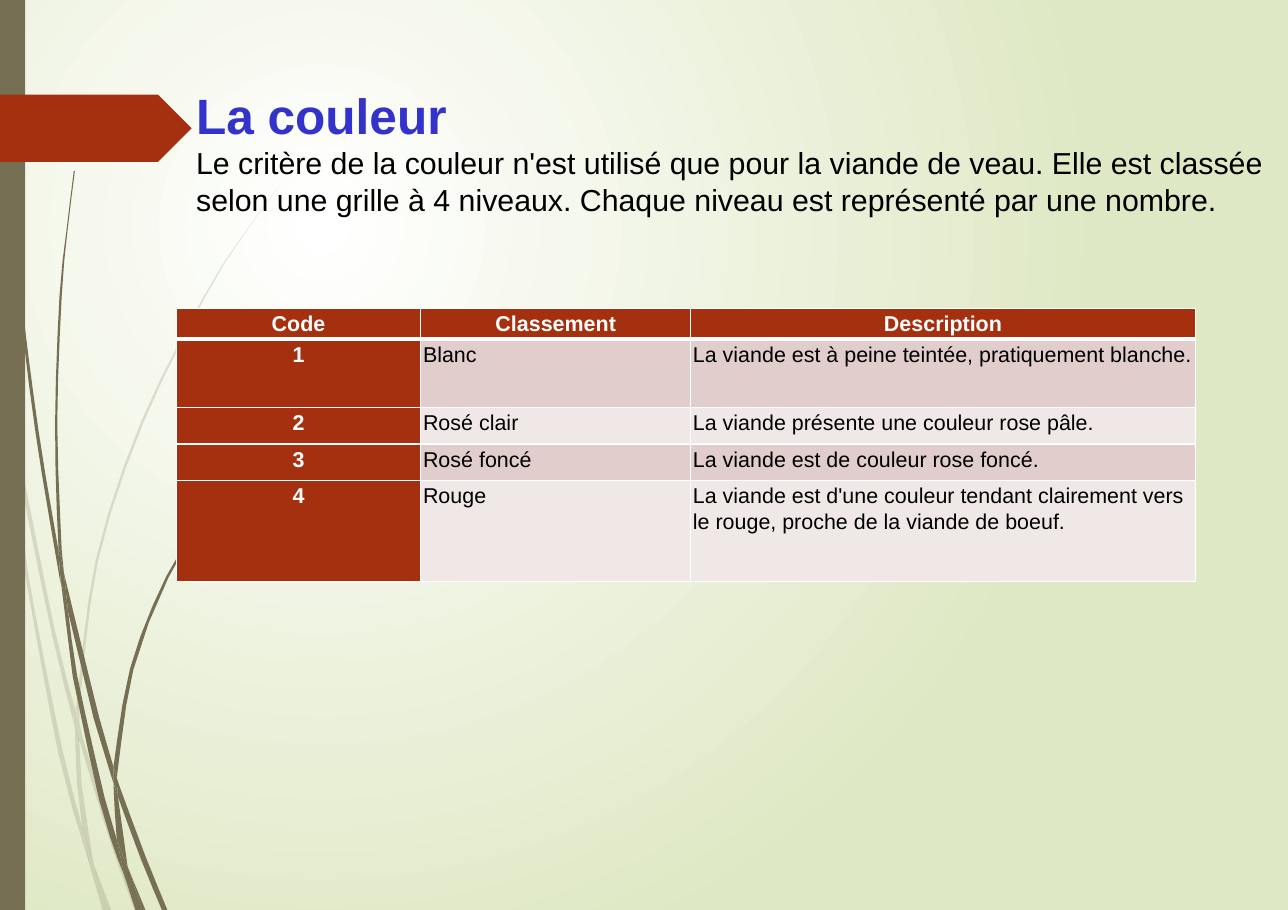
from dataclasses import dataclass
import math

import pptx
import pptx.dml.color
import pptx.enum.shapes
import pptx.enum.text
import pptx.oxml
import pptx.oxml.ns
import pptx.util

# Content
TITLE = "La couleur"
INTRO = ("Le critère de la couleur n'est utilisé que pour la viande de veau. "
         "Elle est classée selon une grille à 4 niveaux. "
         "Chaque niveau est représenté par une nombre.")
ROWS = [
    ("Code", "Classement", "Description"),
    ("1", "Blanc", "La viande est à peine teintée, pratiquement blanche."),
    ("2", "Rosé clair", "La viande présente une couleur rose pâle."),
    ("3", "Rosé foncé", "La viande est de couleur rose foncé."),
    ("4", "Rouge", "La viande est d'une couleur tendant clairement vers "
                   "le rouge, proche de la viande de boeuf."),
]

# Grid, in inches
WIDTH, HEIGHT = 11.69, 8.26
TITLE_BOX = (1.68, 0.72, WIDTH - 1.68, 1.54)
TABLE_AT = (1.6, 2.8)
COL_WIDTHS = (2.22, 2.45, 4.58)
ROW_HEIGHTS = (0.28, 0.62, 0.33, 0.33, 0.92)
CELL_MARGIN = 0.02

# Grass: each piece is two edges, both from top to bottom
FAINT_GRASS = [
    ([(0, 3.1), (0.07, 3.55), (0.09, 3.86)], [(0, 3.3), (0.08, 3.79)]),
    ([(0.11, 3.8), (0.5, 5.73), (0.69, 6.46)], [(0.14, 4.14), (0.47, 5.75), (0.68, 6.6)]),
    ([(0.72, 6.56), (0.75, 6.69), (1.03, 7.62), (1.26, HEIGHT)],
     [(0.72, 6.72), (1, 7.64), (1.22, HEIGHT)]),
    ([(0.85, 7.84), (1.01, HEIGHT)], [(0.97, HEIGHT)]),
    ([(0.09, 3.86), (0.14, 4.14), (0.25, 5.17), (0.57, 6.82), (0.75, 7.52), (0.82, 7.87)],
     [(0.22, 5.17), (0.53, 6.84), (0.75, 7.64)]),
    ([(0.68, 6.6), (0.7, 7.12), (0.75, 7.53), (0.78, 7.63), (0.85, 7.84)],
     [(0.72, 6.72), (0.74, 7.11), (0.84, 7.78)]),
    ([(2.53, 1.69), (2.18, 2.17), (1.85, 2.69), (1.28, 3.83), (0.87, 5.08), (0.69, 6.43)],
     [(2.53, 1.69), (2.18, 2.18), (1.86, 2.7), (1.3, 3.84), (0.89, 5.09), (0.72, 6.43),
      (0.72, 6.56)]),
    ([(0.82, 7.87), (0.96, HEIGHT)], [(0.93, HEIGHT)]),
    ([(0.69, 6.46), (0.68, 6.6), (0.71, 6.7)], [(0.72, 6.56), (0.72, 6.73)]),
    ([(0.76, 7.52), (0.78, 7.62), (0.85, 7.84), (0.97, HEIGHT)],
     [(0.8, 7.79), (0.82, 7.87), (0.96, HEIGHT)]),
]
DARK_GRASS = [
    ([(0.03, 0), (0.06, 1.21), (0.16, 2.57), (0.32, 3.91), (0.55, 5.3)],
     [(0.04, 0.53), (0.07, 1.21), (0.18, 2.56), (0.35, 3.91), (0.53, 4.99)]),
    ([(0.58, 5.2), (0.9, 6.51), (1.03, 6.96), (1.03, 7.11)], [(0.62, 5.56), (0.85, 6.52)]),
    ([(1.06, 7.06), (1.09, 7.15), (1.32, 7.77), (1.52, HEIGHT)],
     [(1.07, 7.23), (1.28, 7.8), (1.47, HEIGHT)]),
    ([(0.55, 5.26), (0.62, 5.56), (0.7, 6.13), (0.95, 7.24), (1.06, 7.62), (1.13, 7.95)],
     [(0.66, 6.14), (0.9, 7.26), (1.07, 7.8)]),
    ([(0.67, 1.55), (0.6, 2.12), (0.54, 2.69), (0.5, 3.85), (0.53, 4.95), (0.58, 5.2)],
     [(0.68, 1.55), (0.61, 2.12), (0.56, 2.69), (0.52, 3.85), (0.56, 4.99)]),
    ([(1.18, 7.92), (1.32, HEIGHT)], [(1.29, HEIGHT)]),
    ([(0.53, 4.95), (0.58, 5.2), (0.62, 5.57)], [(0.53, 5), (0.55, 5.26)]),
    ([(2.52, 3.79), (2.23, 4.11), (1.97, 4.47), (1.51, 5.23), (1.18, 6.07), (1.03, 6.96)],
     [(2.52, 3.79), (2.24, 4.12), (1.98, 4.48), (1.53, 5.24), (1.21, 6.08), (1.07, 6.98),
      (1.06, 7.06)]),
    ([(1.13, 7.95), (1.26, HEIGHT)], [(1.23, HEIGHT)]),
    ([(1.03, 7.11), (1.06, 7.62), (1.12, 7.78), (1.18, 7.92)],
     [(1.05, 7.17), (1.07, 7.23), (1.16, 7.88)]),
    ([(1.03, 6.96), (1.03, 7.1), (1.07, 7.23)], [(1.06, 7.06)]),
    ([(1.06, 7.62), (1.12, 7.78), (1.18, 7.92), (1.29, HEIGHT)],
     [(1.12, 7.9), (1.13, 7.95), (1.26, HEIGHT)]),
]


@dataclass(frozen=True)
class Theme:
    font: str = "Arial"
    title_size: float = 32.4
    intro_size: float = 19.8
    cell_size: float = 14
    title: str = "3333CC"
    text: str = "000000"
    light: str = "FFFFFF"
    glow: str = "DFE8C4"
    olive: str = "766F54"
    accent: str = "A53010"
    bands: tuple = ("E1CDCC", "F0E8E7")


theme = Theme()
Inches, Pt = pptx.util.Inches, pptx.util.Pt
RGB = pptx.dml.color.RGBColor.from_string
qn, parse_xml = pptx.oxml.ns.qn, pptx.oxml.parse_xml
NS = pptx.oxml.ns.nsdecls("a")
SHAPE = pptx.enum.shapes.MSO_SHAPE
ALIGN = pptx.enum.text.PP_ALIGN


def paint(sp, color, alpha=100):
    sp.shadow.inherit = False
    sp.line.fill.background()
    sp.fill.solid()
    sp.fill.fore_color.rgb = RGB(color)
    if alpha < 100:
        clr = sp._element.spPr.find(".//" + qn("a:srgbClr"))
        clr.append(parse_xml(f'<a:alpha {NS} val="{alpha * 1000}"/>'))


def style(r, size, color, bold):
    r.font.name, r.font.size, r.font.bold = theme.font, Pt(size), bold
    r.font.color.rgb = RGB(color)


def smooth(edge):
    """Catmull-Rom spline through an edge, divided only where nodes are far apart."""
    padded = [edge[0], *edge, edge[-1]]
    out = [edge[0]]
    for a, b, c, d in zip(padded, padded[1:], padded[2:], padded[3:]):
        steps = math.ceil(math.dist(b, c) / 0.45)
        for i in range(1, steps + 1):
            t = i / steps
            out.append(tuple(
                q + t / 2 * (s - p + t * (2 * p - 5 * q + 4 * s - u
                                          + t * (3 * (q - s) + u - p)))
                for p, q, s, u in zip(a, b, c, d)))
    return out


def add_grass(slide, pieces, alpha):
    group = slide.shapes.add_group_shape()
    for first, second in pieces:
        outline = [tuple(map(Inches, xy)) for xy in smooth(first) + smooth(second)[::-1]]
        builder = group.shapes.build_freeform(*outline[0])
        builder.add_line_segments(outline[1:], close=True)
        paint(builder.convert_to_shape(), theme.olive, alpha)


def add_borders(cell, bottom):
    tcPr = cell._tc.get_or_add_tcPr()
    for i, (side, width) in enumerate((("L", 1), ("R", 1), ("T", 1), ("B", bottom))):
        tcPr.insert(i, parse_xml(
            f'<a:ln{side} {NS} w="{Pt(width)}"><a:solidFill>'
            f'<a:srgbClr val="{theme.light}"/></a:solidFill></a:ln{side}>'))


def add_background(slide):
    fill = slide.background.fill
    fill.gradient()
    for stop, color in zip(fill.gradient_stops, (theme.light, theme.glow)):
        stop.color.rgb = RGB(color)
    grad = slide._element.find(".//" + qn("a:gradFill"))
    grad.replace(grad.find(qn("a:lin")), parse_xml(
        f'<a:path {NS} path="circle"><a:fillToRect l="50000" t="50000" '
        'r="100000" b="100000"/></a:path>'))


def add_decor(slide):
    add_grass(slide, FAINT_GRASS, 20)
    add_grass(slide, DARK_GRASS, 100)
    for kind, box, color in (
            (SHAPE.RECTANGLE, (0, 0, 0.23, HEIGHT), theme.olive),
            (SHAPE.PENTAGON, (0, 0.86, 1.74, 0.61), theme.accent)):
        paint(slide.shapes.add_shape(kind, *map(Inches, box)), color)


def add_title(slide):
    sp = slide.shapes.title
    sp.left, sp.top, sp.width, sp.height = map(Inches, TITLE_BOX)
    tf = sp.text_frame
    tf.word_wrap = True
    tf.auto_size = pptx.enum.text.MSO_AUTO_SIZE.NONE
    tf.vertical_anchor = pptx.enum.text.MSO_ANCHOR.TOP
    p = tf.paragraphs[0]
    p.text = f"{TITLE}\v{INTRO}"
    p.alignment = ALIGN.LEFT
    style(p.runs[0], theme.title_size, theme.title, True)
    style(p.runs[1], theme.intro_size, theme.text, False)


def add_grades(slide):
    size = (sum(COL_WIDTHS), sum(ROW_HEIGHTS))
    table = slide.shapes.add_table(len(ROWS), len(COL_WIDTHS),
                                   *map(Inches, TABLE_AT + size)).table
    for col, width in zip(table.columns, COL_WIDTHS):
        col.width = Inches(width)
    for i, (row, height, texts) in enumerate(zip(table.rows, ROW_HEIGHTS, ROWS)):
        row.height = Inches(height)
        for j, (cell, text) in enumerate(zip(row.cells, texts)):
            head = i == 0 or j == 0
            cell.margin_left = cell.margin_right = Inches(CELL_MARGIN)
            cell.margin_top = cell.margin_bottom = Inches(CELL_MARGIN)
            cell.fill.solid()
            cell.fill.fore_color.rgb = RGB(theme.accent if head else theme.bands[(i - 1) % 2])
            add_borders(cell, 3 if i == 0 else 1)
            p = cell.text_frame.paragraphs[0]
            p.text = text
            p.alignment = ALIGN.CENTER if head else ALIGN.LEFT
            p.line_spacing = 1.07
            style(p.runs[0], theme.cell_size, theme.light if head else theme.text, head)


prs = pptx.Presentation()
prs.slide_width, prs.slide_height = Inches(WIDTH), Inches(HEIGHT)
slide = prs.slides.add_slide(prs.slide_layouts[5])
for add_part in (add_background, add_decor, add_title, add_grades):
    add_part(slide)
prs.save("out.pptx")
